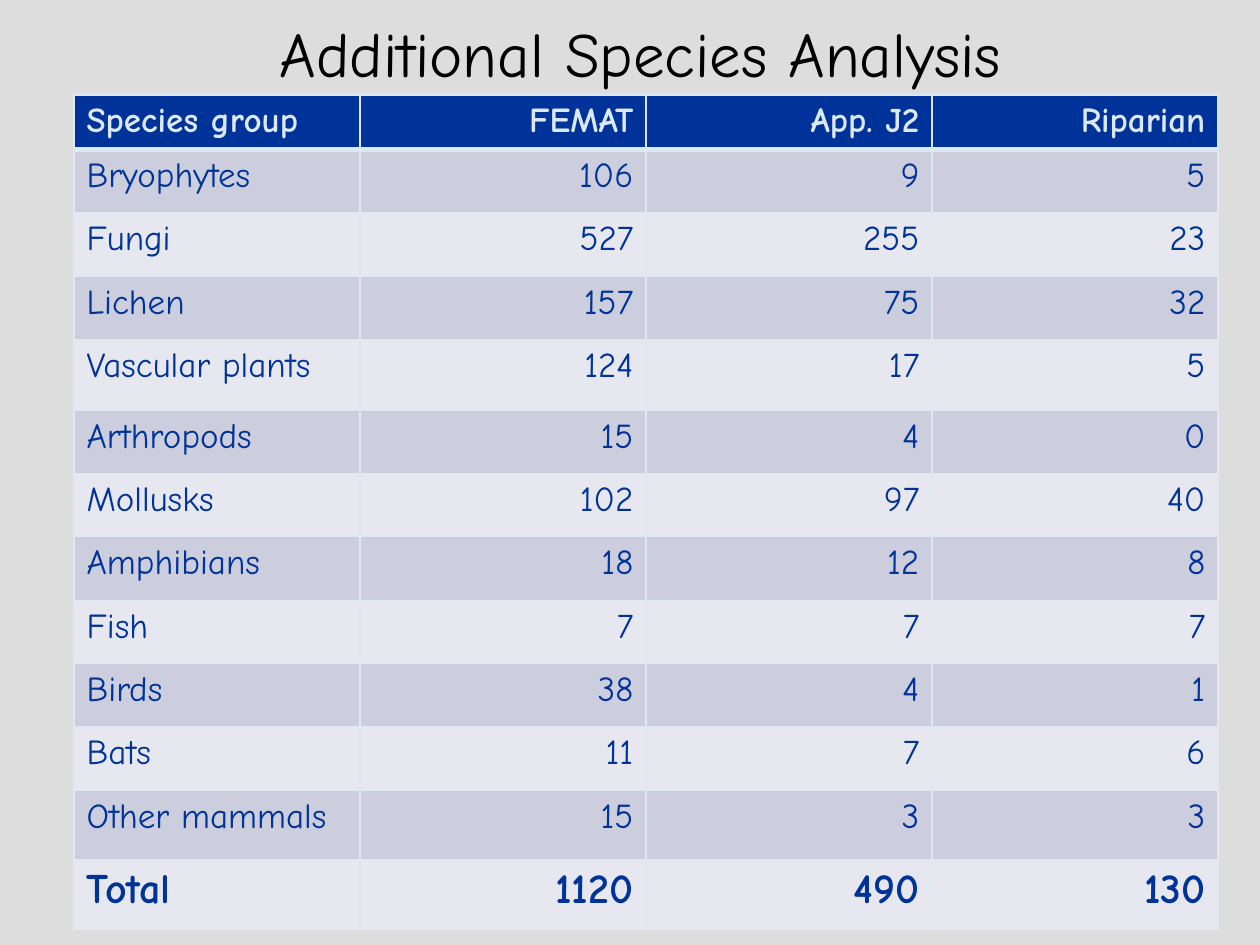
from lxml.etree import SubElement as Sub
from pptx import Presentation
from pptx.dml.color import RGBColor as RGB
from pptx.enum.text import MSO_ANCHOR as Anchor, PP_ALIGN as Align
from pptx.oxml.ns import qn
from pptx.util import Pt

PX = 914400 // 126
GREY = RGB(0xDD, 0xDD, 0xDD)
BLACK = RGB(0, 0, 0)
NAVY = RGB(0x00, 0x33, 0x99)
ICE = RGB(0xDC, 0xE8, 0xF4)
BANDS = RGB(0xE7, 0xE8, 0xEF), RGB(0xCC, 0xCE, 0xDE)

WIDTH = 286
HEIGHTS = [52, 63, 64, 63, 71, 63, 63, 64, 63, 63, 64, 69, 70]
ROWS = [
    ("Species group", "FEMAT", "App. J2", "Riparian"),
    ("Bryophytes", 106, 9, 5),
    ("Fungi", 527, 255, 23),
    ("Lichen", 157, 75, 32),
    ("Vascular plants", 124, 17, 5),
    ("Arthropods", 15, 4, 0),
    ("Mollusks", 102, 97, 40),
    ("Amphibians", 18, 12, 8),
    ("Fish", 7, 7, 7),
    ("Birds", 38, 4, 1),
    ("Bats", 11, 7, 6),
    ("Other mammals", 15, 3, 3),
    ("Total", 1120, 490, 130),
]


class Deck:
    font = "Comic Neue"

    def __init__(self, wide, high):
        self.prs = Presentation()
        self.prs.slide_width, self.prs.slide_height = wide * PX, high * PX
        self.slide = self.prs.slides.add_slide(self.prs.slide_layouts[6])
        fill = self.slide.background.fill
        fill.solid()
        fill.fore_color.rgb = GREY

    def label(self, frame, text, size, color, align, bold=False):
        frame.text = str(text)
        para = frame.paragraphs[0]
        para.alignment = align
        font = para.runs[0].font
        font.name, font.size, font.bold = self.font, Pt(size), bold
        font.color.rgb = color

    def title(self, text, *box):
        frame = self.slide.shapes.add_textbox(*(n * PX for n in box)).text_frame
        frame.word_wrap = True
        frame.vertical_anchor = Anchor.MIDDLE
        self.label(frame, text, 36, BLACK, Align.CENTER)

    def border(self, cell, side, width):
        line = Sub(cell._tc.get_or_add_tcPr(), qn(f"a:ln{side}"), w=str(int(Pt(width))))
        Sub(Sub(line, qn("a:solidFill")), qn("a:srgbClr"), val=str(ICE))

    def cell(self, cell, text, row, col, last):
        head, total = row == 0, row == last
        for side in "LRTB":
            thick = (row, side) in ((0, "B"), (1, "T"))
            self.border(cell, side, 3 if thick else 1)
        cell.fill.solid()
        cell.fill.fore_color.rgb = NAVY if head else BANDS[row % 2]
        self.label(cell.text_frame, text, 24 if total else 20,
                   ICE if head else NAVY,
                   Align.RIGHT if col else Align.LEFT, head or total)

    def table(self, rows, left, top, width, heights):
        count = len(rows[0])
        grid = self.slide.shapes.add_table(
            len(rows), count, left * PX, top * PX,
            count * width * PX, sum(heights) * PX).table
        for col in grid.columns:
            col.width = width * PX
        for row, height in zip(grid.rows, heights):
            row.height = height * PX
        for r, row in enumerate(rows):
            for c, text in enumerate(row):
                self.cell(grid.cell(r, c), text, r, c, len(rows) - 1)


deck = Deck(1260, 945)
deck.title("Additional Species Analysis", 84, 0, 1113, 105)
deck.table(ROWS, 74, 95, WIDTH, HEIGHTS)
deck.prs.save("out.pptx")
